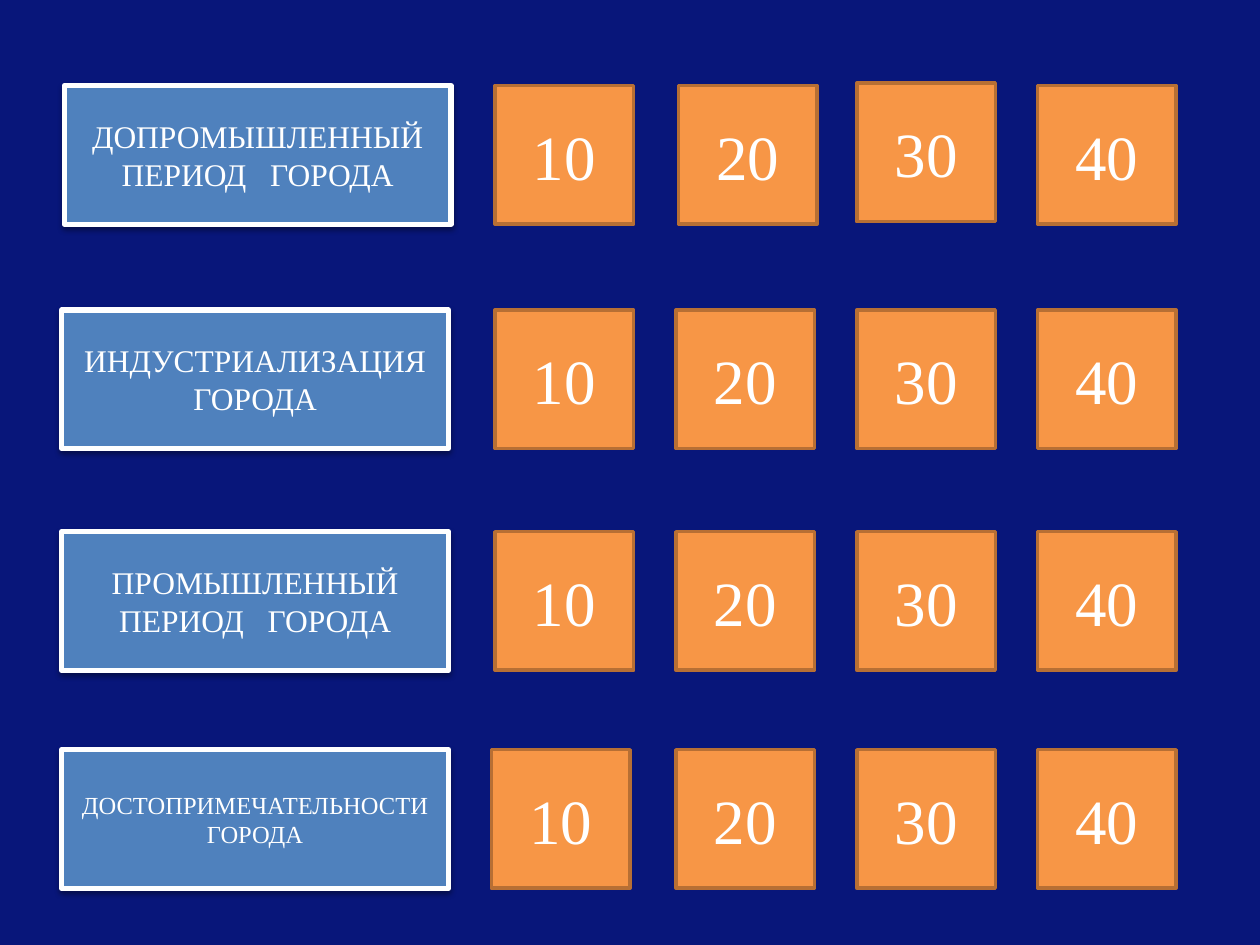
"""Quiz board: four city-history topics, each with four point tiles."""
from lxml import etree
from pptx import Presentation
from pptx import util as u
from pptx.dml.color import RGBColor
from pptx.enum import shapes, text
from pptx.oxml import ns

THEME = {
    "background": "08167A",
    "font": "Times New Roman",
    "text": "FFFFFF",
    "topic": {"fill": "4F81BD", "line": "FFFFFF", "weight": 3},
    "points": {"fill": "F79646", "line": "B76F34", "weight": 2, "size": 36},
    "topic_size": 18,
    "small_topic_size": 14,
    "wide_gap": 9,
}

TILE = 1.1
TOPIC_WIDTH = 3.07
TOPIC_LEFT = 0.49
FIRST_COLUMN = 3.93
COLUMN_STEP = 1.435
ROW_TOPS = [0.68, 2.46, 4.22, 5.95]
POINTS = [10, 20, 30, 40]
TOPICS = [
    (["ДОПРОМЫШЛЕННЫЙ ПЕРИОД", " ", "ГОРОДА"], THEME["topic_size"]),
    (["ИНДУСТРИАЛИЗАЦИЯ ГОРОДА"], THEME["topic_size"]),
    (["ПРОМЫШЛЕННЫЙ ПЕРИОД", " ", "ГОРОДА"], THEME["topic_size"]),
    (["ДОСТОПРИМЕЧАТЕЛЬНОСТИ ГОРОДА"], THEME["small_topic_size"]),
]
NUDGES = {(0, "topic"): (0.02, 0), (0, 20): (0.02, 0), (0, 30): (0, -0.02), (3, 10): (-0.03, 0)}


def add_card(slide, row, key, left, width, words, look, size):
    """Add one bordered card with centred words."""
    dx, dy = NUDGES.get((row, key), (0, 0))
    place = [u.Inches(n) for n in (left + dx, ROW_TOPS[row] + dy, width, TILE)]
    card = slide.shapes.add_shape(shapes.MSO_SHAPE.RECTANGLE, *place)
    card.shadow.inherit = False
    card.fill.solid()
    card.fill.fore_color.rgb = RGBColor.from_string(look["fill"])
    card.line.color.rgb = RGBColor.from_string(look["line"])
    card.line.width = u.Pt(look["weight"])
    frame = card.text_frame
    for name, value in {"word_wrap": True, "vertical_anchor": text.MSO_ANCHOR.MIDDLE}.items():
        setattr(frame, name, value)
    line = frame.paragraphs[0]
    line.alignment = text.PP_ALIGN.CENTER
    for word in words:
        run = line.add_run()
        run.text = word
        for name, value in {"name": THEME["font"], "size": u.Pt(size)}.items():
            setattr(run.font, name, value)
        run.font.color.rgb = RGBColor.from_string(THEME["text"])
        if word == " ":
            run._r.get_or_add_rPr().set("spc", str(THEME["wide_gap"] * 100))
    return card


def add_shadow(card):
    """Give a card a soft black shadow below it."""
    effects = card._element.spPr.find(ns.qn("a:effectLst"))
    settings = {"blurRad": "40000", "dist": "20000", "dir": "5400000", "rotWithShape": "0"}
    shadow = etree.SubElement(effects, ns.qn("a:outerShdw"), settings)
    colour = etree.SubElement(shadow, ns.qn("a:srgbClr"), val="000000")
    etree.SubElement(colour, ns.qn("a:alpha"), val="38000")


deck = Presentation()
deck.slide_width, deck.slide_height = u.Inches(10), u.Inches(7.5)
board = deck.slides.add_slide(deck.slide_layouts[6])
board.background.fill.solid()
board.background.fill.fore_color.rgb = RGBColor.from_string(THEME["background"])

for row, (words, size) in enumerate(TOPICS):
    topic = add_card(board, row, "topic", TOPIC_LEFT, TOPIC_WIDTH, words, THEME["topic"], size)
    add_shadow(topic)
    for column, points in enumerate(POINTS):
        left = FIRST_COLUMN + column * COLUMN_STEP
        look = THEME["points"]
        add_card(board, row, points, left, TILE, [str(points)], look, look["size"])

deck.save("out.pptx")
